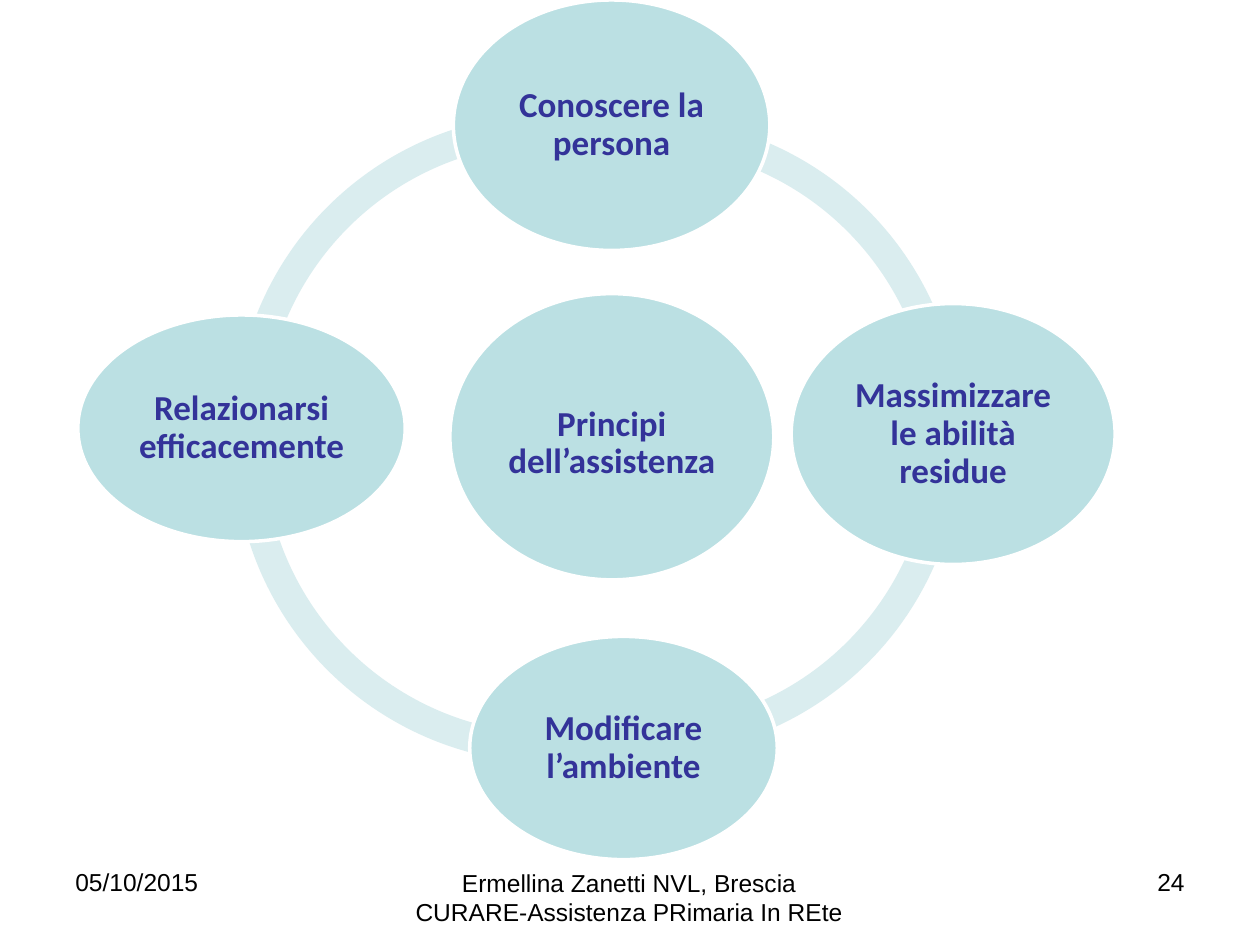
"""Build a slide with the principles of care as a ring of ovals."""
from pptx import Presentation
from pptx.dml.color import RGBColor as RGB
from pptx.enum.shapes import MSO_SHAPE as Kind
from pptx.enum.text import MSO_ANCHOR as Anchor, PP_ALIGN as Align
from pptx.util import Cm, Pt

TEAL = RGB(0xBB, 0xE0, 0xE3)
PALE = RGB(0xDA, 0xED, 0xEF)
NAVY = RGB(0x33, 0x33, 0x99)
WHITE = RGB(0xFF, 0xFF, 0xFF)
BLACK = RGB(0, 0, 0)

RING = 12.85
BAND = 4.6
ARCS = [
    (4.72, 2.29, 180.53, 280.79),
    (4.72, 2.54, 76.71, 183.08),
    (6.53, 2.39, 359.35, 93.31),
    (6.53, 2.36, 264.32, 359.72),
]
OVALS = [
    ("Principi dell’assistenza", (9.07, 5.92, 6.53, 5.77), 0.36),
    ("Conoscere la persona", (9.14, 0, 6.38, 5.05), 0.08),
    ("Massimizzare le abilità residue", (15.95, 6.12, 6.53, 5.26), 0.08),
    ("Modificare l’ambiente", (9.47, 12.83, 6.2, 4.5), 0.08),
    ("Relazionarsi efficacemente", (1.57, 6.35, 6.6, 4.57), 0.08),
]
NOTES = [
    ("05/10/2015", (1.27, 17.35, 5.92, 1.32), Align.LEFT),
    ("Ermellina Zanetti NVL, Brescia\vCURARE-Assistenza PRimaria In REte",
     (7.92, 17.37, 9.53, 1.32), Align.CENTER),
    ("24", (18.21, 17.35, 5.92, 1.32), Align.RIGHT),
]


def assign(item, values):
    for name, value in values.items():
        setattr(item, name, value)


class Page:
    label = {"name": "Calibri", "size": Pt(20), "bold": True}
    small = {"name": "Arial", "size": Pt(14)}
    inset = {"margin_left": Cm(0.08), "margin_right": Cm(0.08),
             "margin_bottom": Cm(0.08), "word_wrap": True,
             "vertical_anchor": Anchor.MIDDLE}

    def __init__(self, slide):
        self.shapes = slide.shapes

    def shape(self, kind, box, fill):
        item = self.shapes.add_shape(kind, *map(Cm, box))
        item.shadow.inherit = False
        item.fill.solid()
        item.fill.fore_color.rgb = fill
        return item

    def label_in(self, frame, text, align, font, color):
        para = frame.paragraphs[0]
        para.text = text
        para.alignment = align
        assign(para.font, font)
        para.font.color.rgb = color
        return para

    def arc(self, left, top, start, end):
        item = self.shape(Kind.BLOCK_ARC, (left, top, RING, RING), PALE)
        item.line.fill.background()
        for index, value in enumerate((start * 0.6, end * 0.6, BAND / 100)):
            item.adjustments[index] = value

    def oval(self, text, box, top):
        item = self.shape(Kind.OVAL, box, TEAL)
        item.line.color.rgb = WHITE
        item.line.width = Pt(2)
        frame = item.text_frame
        assign(frame, {**self.inset, "margin_top": Cm(top)})
        para = self.label_in(frame, text, Align.CENTER, self.label, NAVY)
        para.line_spacing = 0.9

    def note(self, text, box, align):
        frame = self.shapes.add_textbox(*map(Cm, box)).text_frame
        frame.word_wrap = True
        self.label_in(frame, text, align, self.small, BLACK)


def main():
    deck = Presentation()
    assign(deck, {"slide_width": Cm(25.4), "slide_height": Cm(19.05)})
    page = Page(deck.slides.add_slide(deck.slide_layouts[6]))
    for arc in ARCS:
        page.arc(*arc)
    for oval in OVALS:
        page.oval(*oval)
    for note in NOTES:
        page.note(*note)
    deck.save("out.pptx")


if __name__ == "__main__":
    main()
